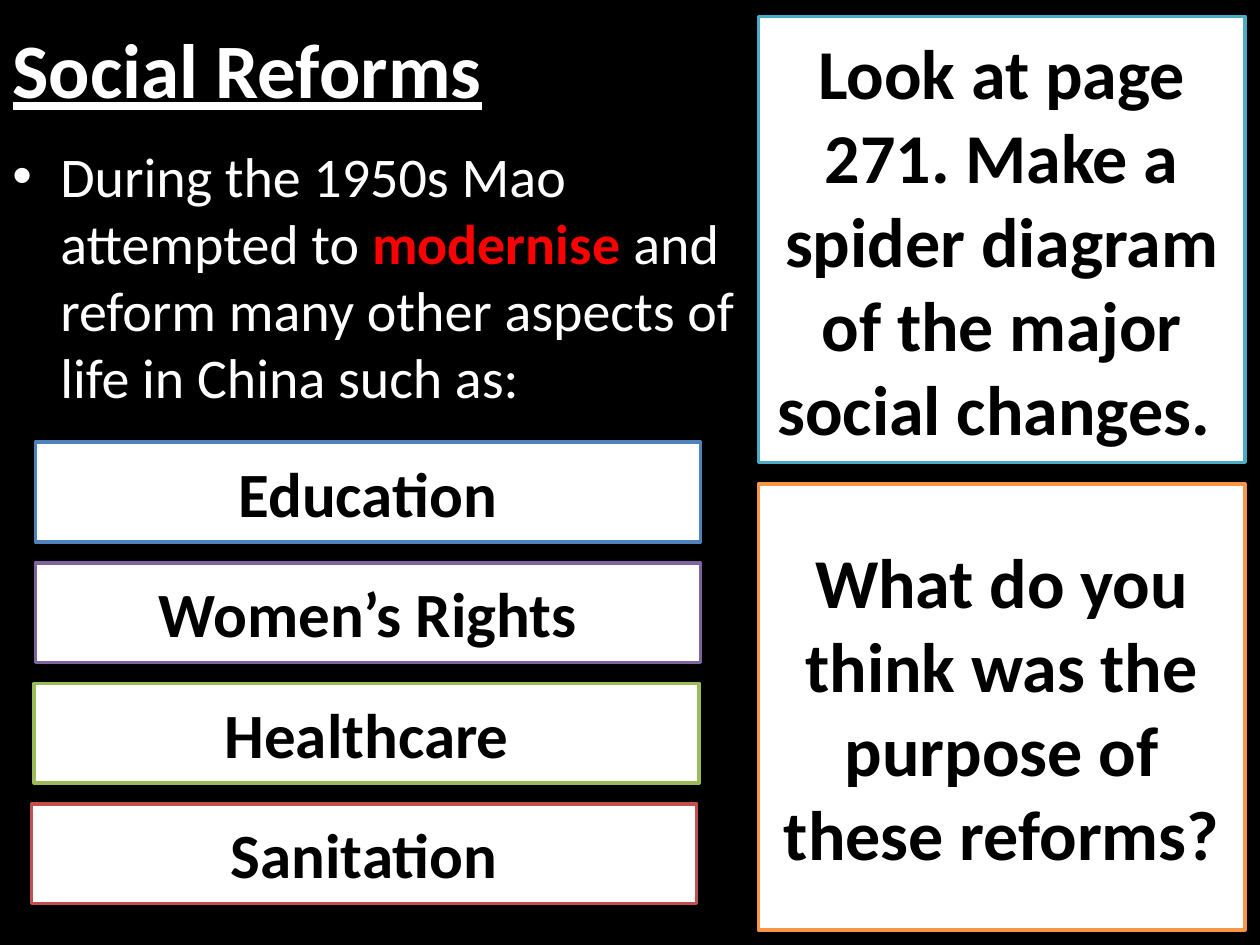
"""Build the Social Reforms slide."""
import pptx
import pptx.dml.color
import pptx.enum.shapes
import pptx.enum.text
import pptx.oxml.ns
import pptx.util
from lxml import etree

RGB = pptx.dml.color.RGBColor
ALIGN = pptx.enum.text.PP_ALIGN
ANCHOR = pptx.enum.text.MSO_ANCHOR
Inches = pptx.util.Inches

BLACK = RGB(0x00, 0x00, 0x00)
WHITE = RGB(0xFF, 0xFF, 0xFF)
RED = RGB(0xFF, 0x00, 0x00)
TEAL = RGB(0x4B, 0xAC, 0xC6)
BLUE = RGB(0x4F, 0x81, 0xBD)
PURPLE = RGB(0x80, 0x64, 0xA2)
GREEN = RGB(0x9B, 0xBB, 0x59)
BRICK = RGB(0xC0, 0x50, 0x4D)
ORANGE = RGB(0xF7, 0x96, 0x46)

WIDTH, HEIGHT = 10, 7.5
TITLE_HEIGHT = HEIGHT / 7
TASK_LEFT, TASK_WIDTH, TASK_HEIGHT = 6.02, 3.86, 3.54
TASK_TOP, TASK_PITCH = 0.13, 3.71
TOPIC_WIDTH, TOPIC_HEIGHT = 5.28, 0.79
TOPIC_TOP, TOPIC_PITCH = 3.51, 2.87 / 3

TOPICS = [
    ("Education", 0.28, BLUE),
    ("Women’s Rights", 0.28, PURPLE),
    ("Healthcare", 0.27, GREEN),
    ("Sanitation", 0.25, BRICK),
]
TASKS = [
    ("Look at page 271. Make a spider diagram of the major social changes. ", TEAL),
    ("What do you think was the purpose of these reforms?", ORANGE),
]
INTRO = [
    ("During the 1950s Mao attempted to ", WHITE, False),
    ("modernise ", RED, True),
    ("and reform many other aspects of life in China such as:", WHITE, False),
]


def format_run(r, size, color, bold):
    """Set the font of one run."""
    r.font.name = "Calibri"
    r.font.size = pptx.util.Pt(size)
    r.font.color.rgb = color
    r.font.bold = bold


def set_title(s, text):
    """Fill the title placeholder and place it across the top."""
    sp = s.shapes.title
    sp.left, sp.top = 0, 0
    sp.width, sp.height = Inches(WIDTH), Inches(TITLE_HEIGHT)
    tf = sp.text_frame
    tf.text = text
    tf.vertical_anchor = ANCHOR.MIDDLE
    p = tf.paragraphs[0]
    p.alignment = ALIGN.LEFT
    format_run(p.runs[0], 44, WHITE, True)
    p.runs[0].font.underline = True


def add_bullet(s, parts):
    """Add the bulleted introduction below the title."""
    sp = s.shapes.add_textbox(0, Inches(TITLE_HEIGHT), Inches(TASK_LEFT),
                              Inches(HEIGHT - TITLE_HEIGHT))
    tf = sp.text_frame
    tf.word_wrap = True
    p = tf.paragraphs[0]
    p.space_before = pptx.util.Pt(6.4)
    pPr = p._p.get_or_add_pPr()
    indent = Inches(0.38)
    pPr.set("marL", str(indent))
    pPr.set("indent", str(-indent))
    qn = pptx.oxml.ns.qn
    etree.SubElement(pPr, qn("a:buFont")).set("typeface", "Arial")
    etree.SubElement(pPr, qn("a:buChar")).set("char", "•")
    for text, color, bold in parts:
        r = p.add_run()
        r.text = text
        format_run(r, 32, color, bold)


def add_box(s, text, left, top, width, height, color, size):
    """Add a white box with a coloured outline and bold centred text."""
    sp = s.shapes.add_shape(pptx.enum.shapes.MSO_SHAPE.RECTANGLE, Inches(left),
                            Inches(top), Inches(width), Inches(height))
    sp.shadow.inherit = False
    sp.fill.solid()
    sp.fill.fore_color.rgb = WHITE
    sp.line.color.rgb = color
    sp.line.width = pptx.util.Pt(2)
    tf = sp.text_frame
    tf.word_wrap = True
    tf.vertical_anchor = ANCHOR.MIDDLE
    tf.text = text
    p = tf.paragraphs[0]
    p.alignment = ALIGN.CENTER
    format_run(p.runs[0], size, BLACK, True)


def main():
    """Build and save the slide."""
    prs = pptx.Presentation()
    prs.slide_width, prs.slide_height = Inches(WIDTH), Inches(HEIGHT)
    s = prs.slides.add_slide(prs.slide_layouts[5])
    s.background.fill.solid()
    s.background.fill.fore_color.rgb = BLACK
    set_title(s, "Social Reforms")
    add_bullet(s, INTRO)
    for row, (text, left, color) in enumerate(TOPICS):
        add_box(s, text, left, TOPIC_TOP + row * TOPIC_PITCH,
                TOPIC_WIDTH, TOPIC_HEIGHT, color, 36)
    for row, (text, color) in enumerate(TASKS):
        add_box(s, text, TASK_LEFT, TASK_TOP + row * TASK_PITCH,
                TASK_WIDTH, TASK_HEIGHT, color, 40)
    prs.save("out.pptx")


if __name__ == "__main__":
    main()
